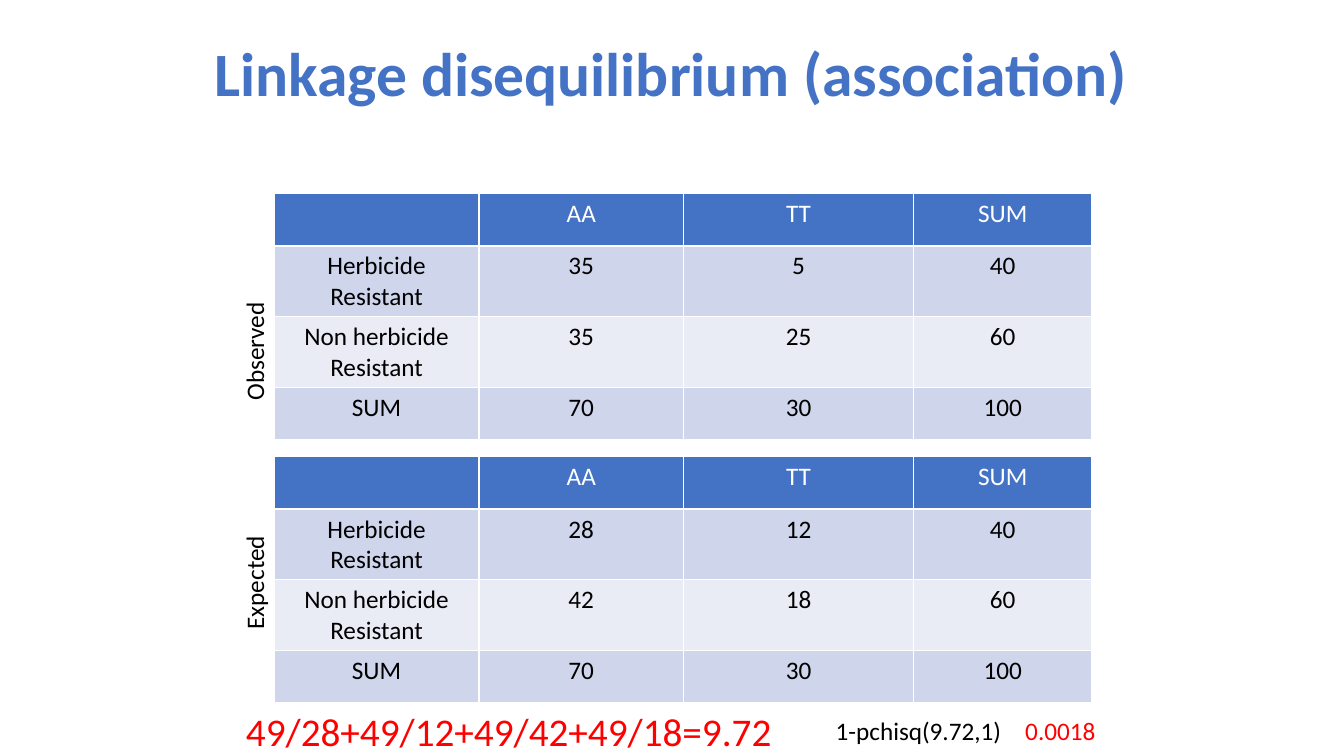
from dataclasses import dataclass

import pptx
import pptx.dml.color
import pptx.enum.text
import pptx.util

Inches = pptx.util.Inches
CENTER = pptx.enum.text.PP_ALIGN.CENTER
LEFT = pptx.enum.text.PP_ALIGN.LEFT


@dataclass(frozen=True)
class Theme:
    font: str = "Calibri"
    blue: str = "4472C4"
    band_dark: str = "CFD5EA"
    band_light: str = "E9EBF5"
    white: str = "FFFFFF"
    black: str = "000000"
    red: str = "FF0000"
    title_size: int = 44
    formula_size: int = 28
    body_size: int = 18


THEME = Theme()
COLUMN_WIDTHS = (2.03, 2.03, 2.28, 1.77)
ROW_HEIGHT = 0.52
GENOTYPES = ("", "AA", "TT", "SUM")
PHENOTYPES = ("Herbicide Resistant", "Non herbicide\nResistant")
OBSERVED = ((35, 5), (35, 25))
EXPECTED = ((28, 12), (42, 18))


def rgb(color):
    return pptx.dml.color.RGBColor.from_string(color)


def write(frame, text, color, size=THEME.body_size, align=CENTER, bold=False):
    """Fill a text frame with one paragraph for each line of text."""
    for index, line in enumerate(text.split("\n")):
        paragraph = frame.add_paragraph() if index else frame.paragraphs[0]
        paragraph.alignment = align
        run = paragraph.add_run()
        run.text = line
        run.font.name = THEME.font
        run.font.size = pptx.util.Pt(size)
        run.font.bold = bold
        run.font.color.rgb = rgb(color)


def add_label(slide, box, text, color, wrap=True, rotation=0, **style):
    label = slide.shapes.add_textbox(*map(Inches, box))
    label.rotation = rotation
    label.text_frame.word_wrap = wrap
    write(label.text_frame, text, color, **style)
    return label


def add_title(slide, text):
    title = add_label(slide, (0.91, 0.03, 11.5, 1.45), text, THEME.blue,
                      size=THEME.title_size, bold=True)
    title.text_frame.vertical_anchor = pptx.enum.text.MSO_ANCHOR.MIDDLE
    title.text_frame.paragraphs[0].line_spacing = 0.9


def with_sums(counts):
    """Extend a grid of counts with row sums and a row of column sums."""
    rows = [(*row, sum(row)) for row in counts]
    return rows + [tuple(map(sum, zip(*rows)))]


def add_contingency_table(slide, top, counts):
    labels = (*PHENOTYPES, "SUM")
    rows = [GENOTYPES] + [(label, *map(str, values))
                          for label, values in zip(labels, with_sums(counts))]
    holder = slide.shapes.add_table(
        len(rows), len(GENOTYPES), Inches(2.72), Inches(top),
        Inches(sum(COLUMN_WIDTHS)), Inches(ROW_HEIGHT * len(rows)))
    table = holder.table
    for column, width in zip(table.columns, COLUMN_WIDTHS):
        column.width = Inches(width)
    for r, values in enumerate(rows):
        table.rows[r].height = Inches(ROW_HEIGHT)
        band = THEME.band_dark if r % 2 else THEME.band_light
        for c, value in enumerate(values):
            cell = table.cell(r, c)
            cell.fill.solid()
            cell.fill.fore_color.rgb = rgb(band if r else THEME.blue)
            if value:
                write(cell.text_frame, value, THEME.black if r else THEME.white)


def main():
    deck = pptx.Presentation()
    deck.slide_width, deck.slide_height = Inches(13.33), Inches(7.5)
    slide = deck.slides.add_slide(deck.slide_layouts[6])

    add_title(slide, "Linkage disequilibrium (association)")
    add_contingency_table(slide, 1.92, OBSERVED)
    add_contingency_table(slide, 4.53, EXPECTED)

    add_label(slide, (1.77, 6.97, 6.55, 0.57), "49/28+49/12+49/42+49/18=9.72",
              THEME.red, size=THEME.formula_size)
    add_label(slide, (8.19, 7.05, 2.02, 0.4), "1-pchisq(9.72,1)",
              THEME.black, align=LEFT)
    add_label(slide, (10.07, 7.05, 0.91, 0.4), "0.0018",
              THEME.red, wrap=False, align=LEFT)
    add_label(slide, (1.51, 2.86, 2.02, 0.4), "Observed",
              THEME.black, rotation=270, align=LEFT)
    add_label(slide, (1.51, 5.58, 2.02, 0.4), "Expected",
              THEME.black, rotation=270)
    deck.save("out.pptx")


if __name__ == "__main__":
    main()
